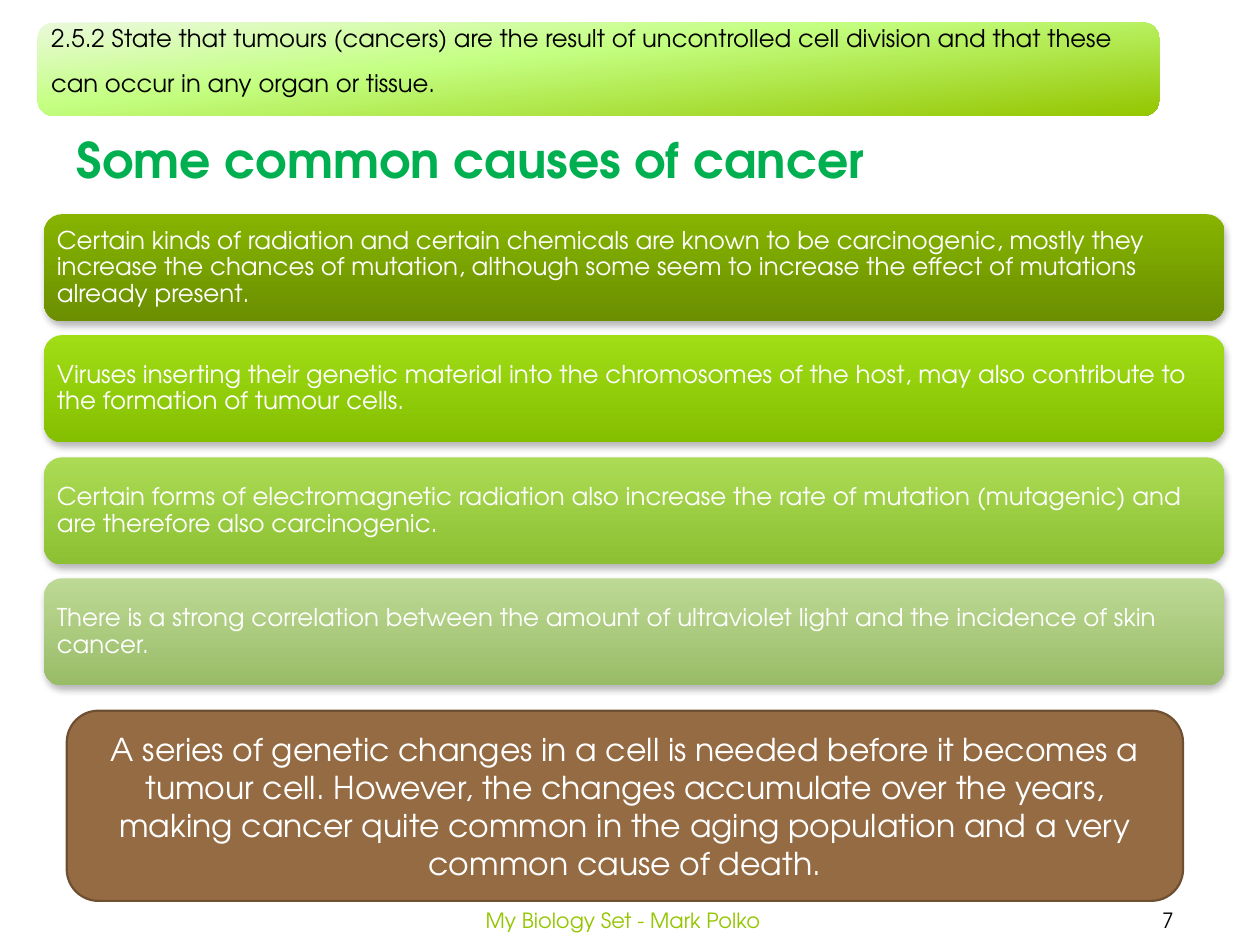
from dataclasses import dataclass

from lxml.etree import SubElement as Sub
from pptx import Presentation
from pptx.dml.color import RGBColor
from pptx.enum.shapes import MSO_SHAPE as Form
from pptx.enum.text import MSO_ANCHOR as Anchor, MSO_AUTO_SIZE as Fit, PP_ALIGN as Align
from pptx.oxml.ns import qn
from pptx.util import Emu, Pt

PX = 9144  # EMU per px, 100 px to the inch
FONT = "TeX Gyre Adventor"


@dataclass
class Box:
    x: int
    y: int
    w: int
    h: int

    def emu(self) -> list[Emu]:
        return [Emu(n * PX) for n in (self.x, self.y, self.w, self.h)]


@dataclass
class Style:
    size: int
    color: str
    align: Align = Align.LEFT
    bold: bool = False
    lines: float = 1.0
    pad: int = 10
    anchor: Anchor = Anchor.MIDDLE


@dataclass
class Cause:
    text: str
    top: str
    low: str


def rgb(code: str) -> RGBColor:
    return RGBColor.from_string(code)


def write(shape, text: str, style: Style):
    """Set the text of a shape as one styled run."""
    frame = shape.text_frame
    frame.word_wrap = True
    frame.auto_size = Fit.NONE
    frame.vertical_anchor = style.anchor
    frame.margin_left = frame.margin_right = Emu(style.pad * PX)
    frame.margin_top = frame.margin_bottom = Emu(5 * PX)
    para = frame.paragraphs[0]
    para.alignment = style.align
    para.line_spacing = style.lines
    run = para.add_run()
    run.text = text
    font = run.font
    font.name, font.size, font.bold = FONT, Pt(style.size), style.bold
    font.color.rgb = rgb(style.color)
    return run


def panel(slide, box: Box):
    shape = slide.shapes.add_shape(Form.ROUNDED_RECTANGLE, *box.emu())
    shape.shadow.inherit = False
    shape.line.fill.background()
    return shape


def blend(shape, stops: list[tuple[int, str]], angle: int) -> None:
    """Fill with a gradient; the angle runs clockwise."""
    shape.fill.gradient()
    shape.fill.gradient_angle = 360 - angle
    group = shape._element.spPr.find(".//" + qn("a:gsLst"))
    for old in list(group):
        group.remove(old)
    for pos, code in stops:
        stop = Sub(group, qn("a:gs"), pos=str(pos * 1000))
        Sub(stop, qn("a:srgbClr"), val=str(rgb(code)))


def shade(shape) -> None:
    """Cast a soft shadow straight down."""
    effect = shape._element.spPr.find(qn("a:effectLst"))
    cast = Sub(effect, qn("a:outerShdw"), blurRad=str(Pt(4)), dist=str(Pt(2)),
               dir="5400000", rotWithShape="0")
    tone = Sub(cast, qn("a:srgbClr"), val=str(rgb("000000")))
    Sub(tone, qn("a:alpha"), val="28000")


def label(slide, box: Box, text: str, color: str) -> None:
    write(slide.shapes.add_textbox(*box.emu()), text, Style(12, color, Align.CENTER))


CAUSES = [
    Cause("Certain kinds of radiation and certain chemicals are known to be carcinogenic, "
          "mostly they increase the chances of mutation, although some seem to increase "
          "the effect of mutations already present.", "86B400", "6B8F00"),
    Cause("Viruses inserting their genetic material into the chromosomes of the host, "
          "may also contribute to the formation of tumour cells.", "A0DD15", "85BF01"),
    Cause("Certain forms of electromagnetic radiation also increase the rate of mutation "
          "(mutagenic) and are therefore also carcinogenic.", "ABDB55", "8DC032"),
    Cause("There is a strong correlation between the amount of ultraviolet light and "
          "the incidence of skin cancer.", "BDD995", "99BC67"),
]


def main() -> None:
    deck = Presentation()
    deck.slide_width, deck.slide_height = Emu(1000 * PX), Emu(750 * PX)
    slide = deck.slides.add_slide(deck.slide_layouts[5])

    # Title
    title = slide.shapes.title
    title.left, title.top, title.width, title.height = Box(51, 98, 772, 57).emu()
    write(title, "Some common causes of cancer",
          Style(28, "00B050", bold=True, anchor=Anchor.TOP))

    # Conclusion
    end = panel(slide, Box(53, 564, 886, 151))
    end.fill.solid()
    end.fill.fore_color.rgb = rgb("956B43")
    end.line.color.rgb = rgb("6E4F32")
    end.line.width = Pt(1.25)
    write(end, "A series of genetic changes in a cell is needed before it becomes a tumour "
          "cell. However, the changes accumulate over the years, making cancer quite common "
          "in the aging population and a very common cause of death.",
          Style(18, "FFFFFF", Align.CENTER))

    # Page number and footer
    label(slide, Box(854, 710, 146, 40), "7", "000000")
    label(slide, Box(303, 710, 383, 40), "My Biology Set - Mark Polko", "94C600")

    # Causes, evenly stacked
    for i, cause in enumerate(CAUSES):
        row = panel(slide, Box(35, 170 + round(i * 96.4), 937, 85))
        blend(row, [(0, cause.top), (100, cause.low)], 90)
        shade(row)
        write(row, cause.text, Style(14, "FFFFFF", lines=0.9, pad=6))

    # Syllabus statement, in raised type
    head = panel(slide, Box(30, 18, 890, 74))
    blend(head, [(0, "EAF9DA"), (40, "C4FF82"), (100, "94C600")], 84)
    run = write(head, "2.5.2 State that tumours (cancers) are the result of uncontrolled "
                "cell division and that these can occur in any organ or tissue.",
                Style(24, "000000", lines=0.9, pad=7))
    run.font._element.set("baseline", "30000")

    deck.save("out.pptx")


if __name__ == "__main__":
    main()
